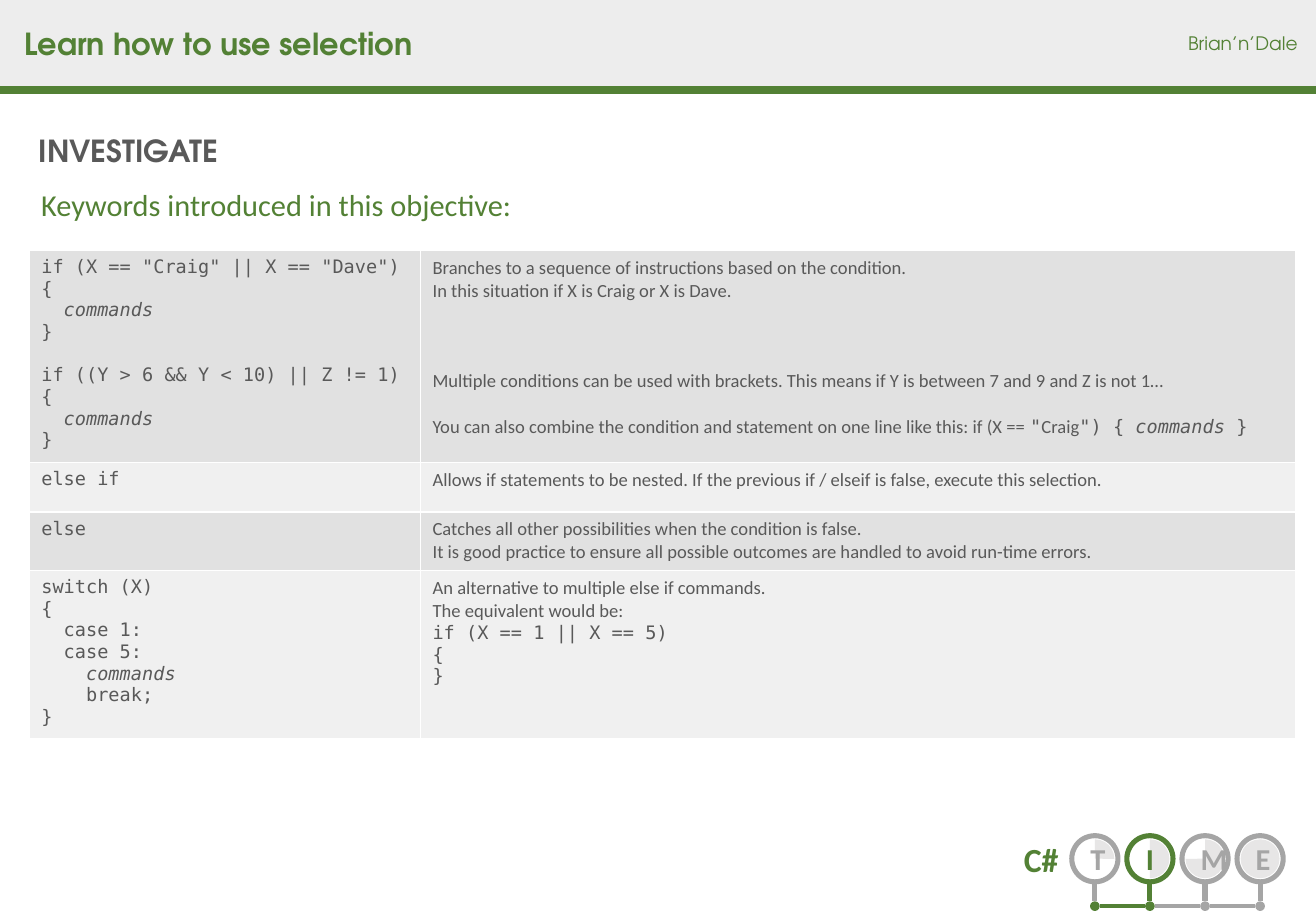
import pptx
import pptx.dml.color
import pptx.enum.shapes
import pptx.enum.text
import pptx.oxml
import pptx.oxml.ns
import pptx.util

Inches = pptx.util.Inches
Pt = pptx.util.Pt
RGBColor = pptx.dml.color.RGBColor
MSO_SHAPE = pptx.enum.shapes.MSO_SHAPE
PP_ALIGN = pptx.enum.text.PP_ALIGN
MSO_ANCHOR = pptx.enum.text.MSO_ANCHOR

GREEN = RGBColor(0x53, 0x81, 0x35)
TEXT_GREY = RGBColor(0x59, 0x59, 0x59)
MID_GREY = RGBColor(0xA5, 0xA5, 0xA5)
PIE_GREY = RGBColor(0xE7, 0xE6, 0xE6)
BAND_GREY = RGBColor(0xED, 0xED, 0xED)
ROW_DARK = RGBColor(0xE1, 0xE1, 0xE1)
ROW_LIGHT = RGBColor(0xF0, 0xF0, 0xF0)

HEADING = "TeX Gyre Adventor"
BODY = "Calibri"
CODE = "DejaVu Sans Mono"


def add_run(p, text, font, size, color, bold=False, italic=False):
    r = p.add_run()
    r.text = text
    r.font.name = font
    r.font.size = Pt(size)
    r.font.color.rgb = color
    r.font.bold = bold
    r.font.italic = italic


def add_text(s, box, text, font, size, color, bold=False, wrap=False):
    sp = s.shapes.add_textbox(*map(Inches, box))
    sp.text_frame.word_wrap = wrap
    add_run(sp.text_frame.paragraphs[0], text, font, size, color, bold)
    return sp


def add_shape(s, kind, box, fill=None, line=None):
    sp = s.shapes.add_shape(kind, *map(Inches, box))
    sp.shadow.inherit = False
    if fill is None:
        sp.fill.background()
    else:
        sp.fill.solid()
        sp.fill.fore_color.rgb = fill
    if line is None:
        sp.line.fill.background()
    else:
        sp.line.color.rgb = line
        sp.line.width = Pt(3)
    return sp


def add_line(s, ends, color, width):
    line = s.shapes.add_connector(
        pptx.enum.shapes.MSO_CONNECTOR.STRAIGHT, *map(Inches, ends))
    line.line.color.rgb = color
    line.line.width = Pt(width)
    line.element.spPr.append(pptx.oxml.parse_xml(
        f'<a:effectLst {pptx.oxml.ns.nsdecls("a")}/>'))


def add_header(s, left, top, width, height):
    band = add_shape(s, MSO_SHAPE.RECTANGLE, (left, top, width, height), BAND_GREY)
    bottom = top + height
    add_line(s, (left, bottom, left + width, bottom), GREEN, 4.5)

    title = s.shapes.title
    title.left, title.top = Inches(left + 0.1), Inches(top + 0.16)
    title.width, title.height = Inches(3.43), Inches(0.4)
    band.element.addnext(title.element)
    tf = title.text_frame
    tf.word_wrap = False
    tf.auto_size = pptx.enum.text.MSO_AUTO_SIZE.NONE
    tf.vertical_anchor = MSO_ANCHOR.TOP
    p = tf.paragraphs[0]
    p.alignment = PP_ALIGN.LEFT
    add_run(p, "Learn how to use selection", HEADING, 18, GREEN, bold=True)

    author = add_text(s, (left + width - 1.27, top + 0.21, 1.22, 0.29),
                      "Brian’n’Dale", HEADING, 11, GREEN)
    author.text_frame.paragraphs[0].alignment = PP_ALIGN.RIGHT


def add_intro(s, left, top, width):
    add_text(s, (left, top, 1.71, 0.4), "INVESTIGATE", HEADING, 18, TEXT_GREY, bold=True)
    keywords = add_text(s, (left + 0.02, top + 0.48, width, 0.42),
                        "Keywords introduced in this objective:", BODY, 18, GREEN, wrap=True)
    keywords.text_frame.paragraphs[0].line_spacing = 0.9


def code(text, gap=0):
    """Return one (gap, runs) pair per line; the placeholder word is italic."""
    return [(gap if i == 0 else 0, [(line, CODE, line.strip() == "commands")])
            for i, line in enumerate(text.split("\n"))]


def prose(text, gap=0):
    return [(gap, [(text, BODY, False)])]


ONE_LINER = [(13.2, [
    ("You can also combine the condition and statement on one line like this: if (X == ",
     BODY, False),
    ('"', CODE, False), ("Craig", BODY, False), ('") { ', CODE, False),
    ("commands", CODE, True), (" }", CODE, False)])]

KEYWORDS = [
    (1.7,
     code('if (X == "Craig" || X == "Dave")\n{\n  commands\n}')
     + code("if ((Y > 6 && Y < 10) || Z != 1)\n{\n  commands\n}", 12.8),
     prose("Branches to a sequence of instructions based on the condition.")
     + prose("In this situation if X is Craig or X is Dave.")
     + prose("Multiple conditions can be used with brackets. "
             "This means if Y is between 7 and 9 and Z is not 1…", 40.3)
     + ONE_LINER),
    (0.41,
     code("else if"),
     prose("Allows if statements to be nested. "
           "If the previous if / elseif is false, execute this selection.")),
    (0.48,
     code("else"),
     prose("Catches all other possibilities when the condition is false.")
     + prose("It is good practice to ensure all possible outcomes are handled "
             "to avoid run-time errors.")),
    (1.34,
     code("switch (X)\n{\n  case 1:\n  case 5:\n    commands\n    break;\n}"),
     prose("An alternative to multiple else if commands.")
     + prose("The equivalent would be:")
     + code("if (X == 1 || X == 5)\n{\n}")),
]


def fill_cell(cell, lines, fill):
    tcPr = cell._tc.get_or_add_tcPr()
    for side in ("lnL", "lnR", "lnT", "lnB"):
        tcPr.append(pptx.oxml.parse_xml(
            f'<a:{side} {pptx.oxml.ns.nsdecls("a")} w="12700"><a:solidFill>'
            f'<a:srgbClr val="FFFFFF"/></a:solidFill></a:{side}>'))
    cell.fill.solid()
    cell.fill.fore_color.rgb = fill
    tf = cell.text_frame
    for i, (gap, runs) in enumerate(lines):
        p = tf.add_paragraph() if i else tf.paragraphs[0]
        if gap:
            p.space_before = Pt(gap)
        for text, font, italic in runs:
            add_run(p, text, font, 11, TEXT_GREY, italic=italic)


def add_keyword_table(s, left, top, widths):
    height = sum(row[0] for row in KEYWORDS)
    table = s.shapes.add_table(len(KEYWORDS), len(widths), Inches(left), Inches(top),
                               Inches(sum(widths)), Inches(height)).table
    table.first_row = False
    table.horz_banding = False
    for column, width in zip(table.columns, widths):
        column.width = Inches(width)
    for i, (row_height, *cells) in enumerate(KEYWORDS):
        table.rows[i].height = Inches(row_height)
        for j, lines in enumerate(cells):
            fill_cell(table.cell(i, j), lines, ROW_LIGHT if i % 2 else ROW_DARK)


def add_time_tracker(s, left, top):
    """Draw the language label and the T-I-M-E stages, with the second one active."""
    label = add_text(s, (left, top, 1.23, 0.44), "C#", BODY, 20, GREEN, bold=True, wrap=True)
    label.text_frame.vertical_anchor = MSO_ANCHOR.BOTTOM
    label.text_frame.paragraphs[0].alignment = PP_ALIGN.RIGHT

    step = 1.36 / 3
    active = 1
    for i, letter in enumerate("TIME"):
        x = left + 1.24 + i * step
        y = top + 0.03
        color = GREEN if i == active else MID_GREY
        kind = MSO_SHAPE.OVAL if i == 3 else MSO_SHAPE.PIE
        pie = add_shape(s, kind, (x + 0.03, y + 0.03, 0.32, 0.32), PIE_GREY)
        if kind == MSO_SHAPE.PIE:
            pie.adjustments[0] = 270 * 0.6
            pie.adjustments[1] = 90 * i * 0.6
        ring = add_shape(s, MSO_SHAPE.OVAL, (x, y, 0.38, 0.38), line=color)
        ring.text_frame.vertical_anchor = MSO_ANCHOR.MIDDLE
        p = ring.text_frame.paragraphs[0]
        p.alignment = PP_ALIGN.CENTER
        add_run(p, letter, BODY, 18, color, bold=True)

        center = x + 0.19
        add_line(s, (center, y + 0.38, center, y + 0.54), color, 3)
        add_shape(s, MSO_SHAPE.OVAL, (center - 0.04, y + 0.54, 0.08, 0.08),
                  GREEN if i <= active else MID_GREY)
        if i < 3:
            add_line(s, (center + 0.04, y + 0.58, center + step - 0.04, y + 0.58),
                     GREEN if i < active else MID_GREY, 2.25)


def main():
    prs = pptx.Presentation()
    prs.slide_width, prs.slide_height = Inches(10.83), Inches(7.5)
    s = prs.slides.add_slide(prs.slide_layouts[5])
    add_header(s, 0, 0, 10.83, 0.74)
    add_intro(s, 0.22, 1.04, 10.32)
    add_keyword_table(s, 0.24, 2.06, (3.22, 7.2))
    add_time_tracker(s, 7.58, 6.85)
    prs.save("out.pptx")


if __name__ == "__main__":
    main()
